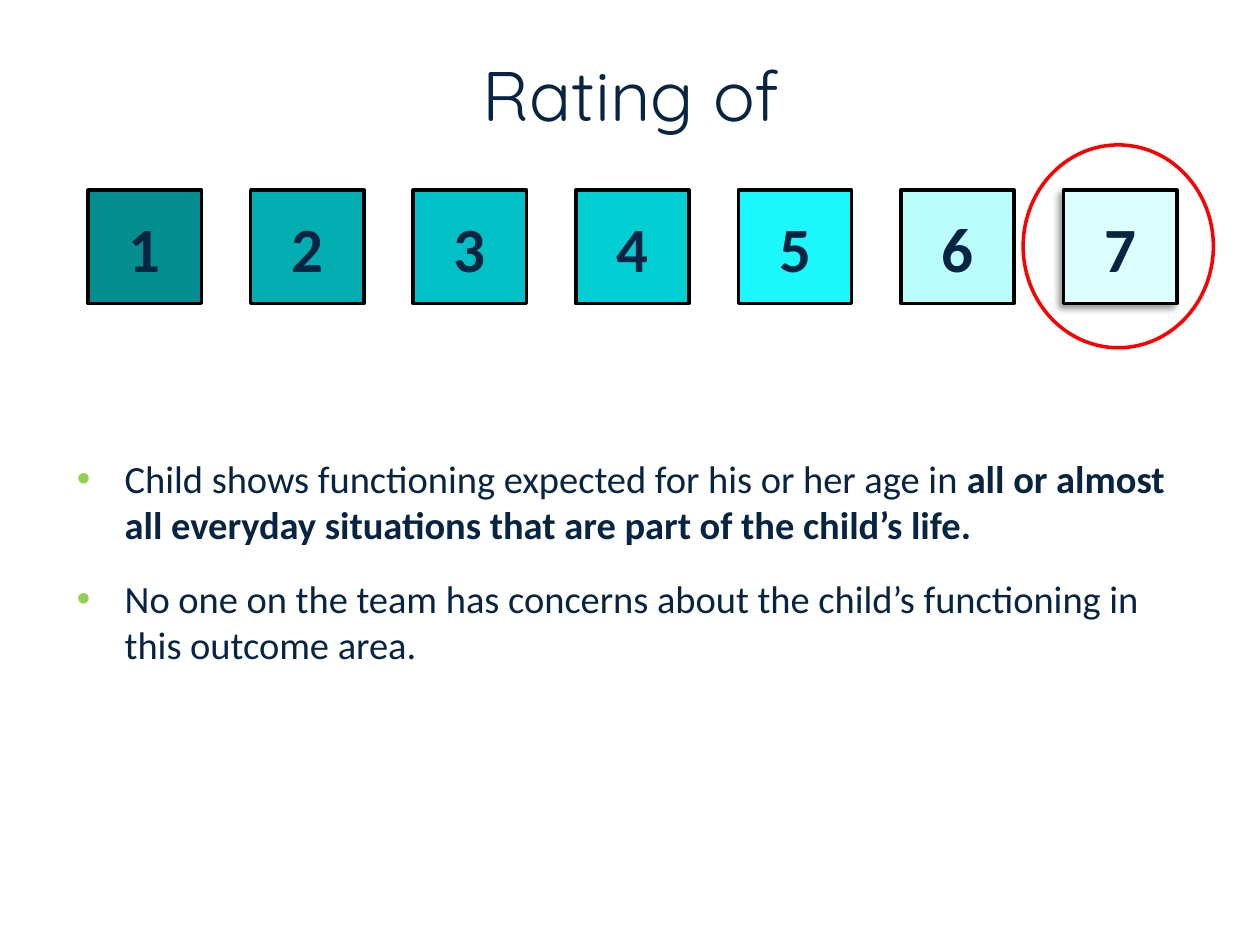
from dataclasses import dataclass

from lxml.etree import SubElement
from pptx import Presentation
from pptx.dml.color import RGBColor
from pptx.enum.shapes import MSO_SHAPE as Preset
from pptx.enum.text import MSO_ANCHOR as Anchor, MSO_AUTO_SIZE as AutoSize, PP_ALIGN as Align
from pptx.oxml.ns import qn
from pptx.shapes.autoshape import Shape
from pptx.slide import Slide
from pptx.util import Pt

PX = 9144  # 100 px to the inch


@dataclass(frozen=True)
class Theme:
    ink: str = "072543"
    bullet: str = "92D050"
    outline: str = "000000"
    highlight: str = "FF0000"
    paper: str = "FFFFFF"
    title_font: str = "Quicksand"
    body_font: str = "Calibri"
    title_size: int = 40
    rating_size: int = 36
    body_size: int = 22
    line_width: int = 2


@dataclass(frozen=True)
class Area:
    left: int
    top: int
    width: int
    height: int

    def emu(self) -> tuple[int, ...]:
        return tuple(side * PX for side in (self.left, self.top, self.width, self.height))


@dataclass(frozen=True)
class Rating:
    number: int
    fill: str


@dataclass(frozen=True)
class Phrase:
    text: str
    bold: bool = False


THEME = Theme()
TITLE_AREA = Area(47, 25, 908, 99)
BODY_AREA = Area(51, 356, 900, 197)
RING_AREA = Area(812, 115, 151, 161)
RATING_LEFT, RATING_TOP, RATING_SIDE, RATING_STEP = 70, 151, 90, 129
BULLET_INDENT = 38
CHOSEN = 7

FILLS = ["028D90", "02AEB2", "02C1C6", "02CFD4", "1BF8FD", "B9FDFD", "DDFEFF"]
RATINGS = [Rating(number, fill) for number, fill in enumerate(FILLS, 1)]
BULLETS = [
    [
        Phrase("Child shows functioning expected for his or her age in "),
        Phrase("all or almost all everyday situations that are part of the child’s life.", True),
    ],
    [Phrase("No one on the team has concerns about the child’s functioning in this outcome area.")],
]


def add_span(para, text: str, font: str, size: int, bold: bool = False) -> None:
    span = para.add_run()
    span.text = text
    span.font.name = font
    span.font.size = Pt(size)
    span.font.bold = bold
    span.font.color.rgb = RGBColor.from_string(THEME.ink)


def place(shape: Shape, area: Area) -> None:
    shape.left, shape.top, shape.width, shape.height = area.emu()


def add_outlined(page: Slide, preset: Preset, area: Area, fill: str, line: str) -> Shape:
    shape = page.shapes.add_shape(preset, *area.emu())
    shape.shadow.inherit = False
    shape.fill.solid()
    shape.fill.fore_color.rgb = RGBColor.from_string(fill)
    shape.line.color.rgb = RGBColor.from_string(line)
    shape.line.width = Pt(THEME.line_width)
    return shape


def add_shadow(shape: Shape) -> None:
    """Cast a soft shadow to the lower left."""
    effects = shape.element.spPr.find(qn("a:effectLst"))
    shadow = SubElement(effects, qn("a:outerShdw"), blurRad=str(Pt(4)), dist=str(Pt(3)),
                        dir=str(135 * 60000), algn="tr", rotWithShape="0")
    color = SubElement(shadow, qn("a:srgbClr"), val=THEME.outline)
    SubElement(color, qn("a:alpha"), val="40000")


def add_rating(page: Slide, rating: Rating) -> None:
    left = RATING_LEFT + (rating.number - 1) * RATING_STEP
    area = Area(left, RATING_TOP, RATING_SIDE, RATING_SIDE)
    box = add_outlined(page, Preset.RECTANGLE, area, rating.fill, THEME.outline)
    if rating.number == CHOSEN:
        add_shadow(box)
    box.text_frame.vertical_anchor = Anchor.MIDDLE
    para = box.text_frame.paragraphs[0]
    para.alignment = Align.CENTER
    add_span(para, str(rating.number), THEME.body_font, THEME.rating_size, True)


def set_bullet(para) -> None:
    props = para._p.get_or_add_pPr()
    props.set("marL", str(BULLET_INDENT * PX))
    props.set("indent", str(-BULLET_INDENT * PX))
    color = SubElement(props, qn("a:buClr"))
    SubElement(color, qn("a:srgbClr"), val=THEME.bullet)
    SubElement(props, qn("a:buFont"), typeface="Arial")
    SubElement(props, qn("a:buChar"), char="•")


def fill_title(title: Shape) -> None:
    place(title, TITLE_AREA)
    title.text_frame.vertical_anchor = Anchor.MIDDLE
    title.text_frame.auto_size = AutoSize.NONE
    para = title.text_frame.paragraphs[0]
    para.alignment = Align.CENTER
    add_span(para, "Rating of", THEME.title_font, THEME.title_size)


def fill_body(body: Shape) -> None:
    place(body, BODY_AREA)
    frame = body.text_frame
    frame.auto_size = AutoSize.NONE
    for index, phrases in enumerate(BULLETS):
        para = frame.add_paragraph() if index else frame.paragraphs[0]
        para.space_before = Pt(4 if index else 0)
        para.space_after = Pt(12)
        set_bullet(para)
        for phrase in phrases:
            add_span(para, phrase.text, THEME.body_font, THEME.body_size, phrase.bold)


def main() -> None:
    deck = Presentation()
    deck.slide_width, deck.slide_height = 1000 * PX, 750 * PX
    page = deck.slides.add_slide(deck.slide_layouts[1])
    fill_title(page.shapes.title)
    fill_body(page.placeholders[1])
    for rating in RATINGS:
        if rating.number == CHOSEN:
            add_outlined(page, Preset.OVAL, RING_AREA, THEME.paper, THEME.highlight)
        add_rating(page, rating)
    deck.save("out.pptx")


if __name__ == "__main__":
    main()
